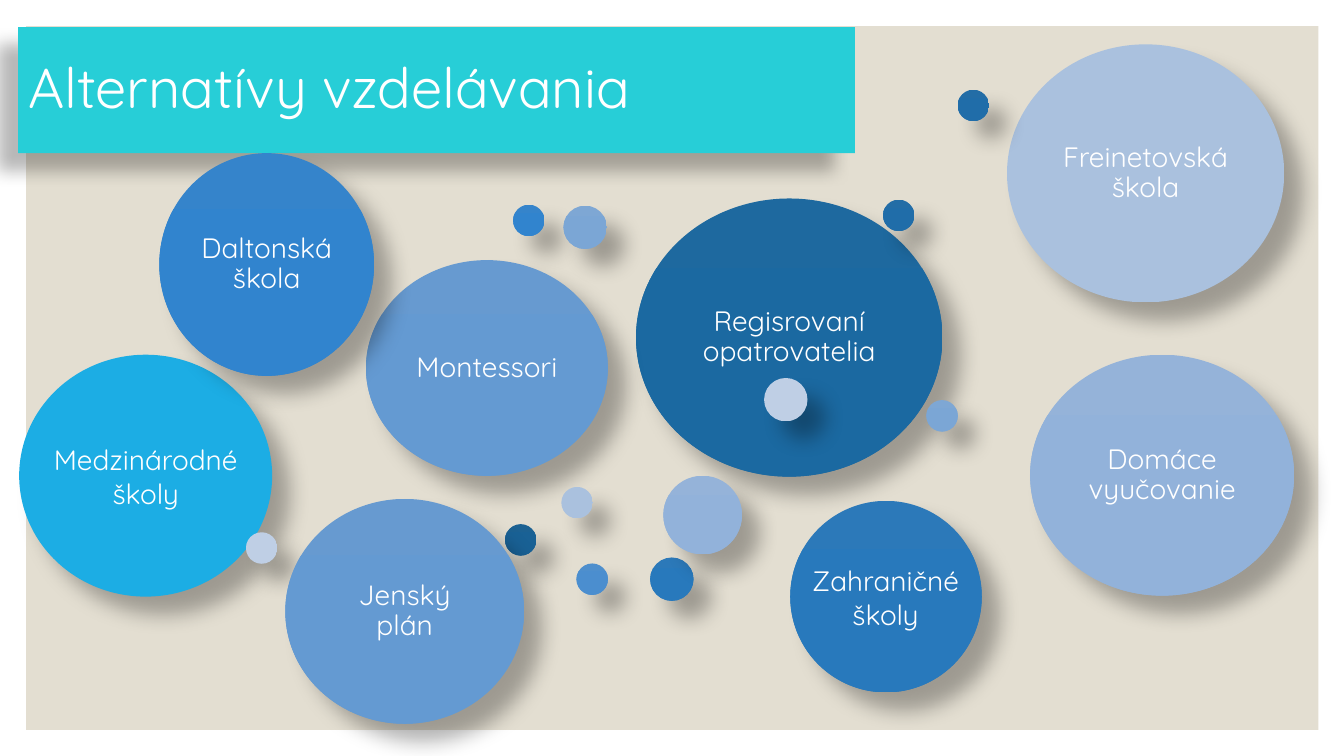
from lxml import etree
from pptx import Presentation
from pptx.dml.color import RGBColor
from pptx.enum.shapes import MSO_SHAPE
from pptx.enum.text import MSO_ANCHOR, MSO_AUTO_SIZE, PP_ALIGN
from pptx.oxml.ns import qn
from pptx.util import Pt

RECT, OVAL = MSO_SHAPE.RECTANGLE, MSO_SHAPE.OVAL
MIDDLE = MSO_ANCHOR.MIDDLE
LEFT, CENTER = PP_ALIGN.LEFT, PP_ALIGN.CENTER
NO_FIT = MSO_AUTO_SIZE.NONE

# Top and lower colour of each bubble shade, dark to pale
SHADES = {
    "ink": ("1E699F", "1B69A1"),
    "navy": ("1C6192", "196195"),
    "deep": ("236DA6", "206DA9"),
    "royal": ("2C79B9", "2879BC"),
    "bright": ("3584CB", "3184CE"),
    "mid": ("4E8FCD", "4B8ECF"),
    "soft": ("679AD0", "649AD2"),
    "light": ("7EA7D4", "7BA6D5"),
    "pale": ("95B3D9", "92B2DA"),
    "mist": ("AAC1DE", "A8C0DF"),
    "haze": ("BFCFE5", "BECEE4"),
}
SMALL, MEDIUM, LARGE = 22.5, 31, 56.2

# Shade, left, top, width, height, label; from back to front
BUBBLES = [
    ("ink", 454.3, 141.8, 218.9, 198.7, "Regisrovaní opatrovatelia"),
    ("navy", 360.7, 374.4, SMALL, SMALL, ""),
    ("deep", 630.7, 142.6, SMALL, SMALL, ""),
    ("royal", 464.4, 398.2, MEDIUM, MEDIUM, ""),
    ("bright", 366.5, 146.2, SMALL, SMALL, ""),
    ("soft", 261.4, 185.8, 172.8, 154.1, "Montessori"),
    ("light", 402.5, 146.9, MEDIUM, MEDIUM, ""),
    ("pale", 473.8, 339.8, LARGE, LARGE, ""),
    ("mist", 719.3, 31.7, 198, 184.3, "Freinetovská škola"),
    ("haze", 545.8, 270, MEDIUM, MEDIUM, ""),
    ("haze", 175.7, 380.2, SMALL, SMALL, ""),
    ("mist", 401, 347.8, SMALL, SMALL, ""),
    ("pale", 735.8, 253.4, 188.6, 172.1, "Domáce vyučovanie"),
    ("light", 661.7, 285.8, SMALL, SMALL, ""),
    ("soft", 203.8, 356.4, 170.6, 160.6, "Jenský plán"),
    ("mid", 411.8, 402.5, SMALL, SMALL, ""),
    ("bright", 113.8, 109.4, 153.4, 159.1, "Daltonská škola"),
    ("royal", 564.5, 357.8, 136.8, 136.8, ""),
    ("deep", 684, 64.1, SMALL, SMALL, ""),
]


def paint(fill, top, low=None):
    """Fill with one colour, or fade from top to low over the upper half."""
    if low is None:
        fill.solid()
        fill.fore_color.rgb = RGBColor.from_string(top)
        return
    fill.gradient()
    fill.gradient_angle = 270
    for stop, place, shade in zip(fill.gradient_stops, (0, 0.5), (top, low)):
        stop.position = place
        stop.color.rgb = RGBColor.from_string(shade)


def cast(shape, blur=15, dist=18, angle=45, alpha=30):
    """Give the shape a soft black shadow."""
    shape.shadow.inherit = False
    effects = shape.element.spPr.find(qn("a:effectLst"))
    outer = etree.SubElement(effects, qn("a:outerShdw"), blurRad=str(Pt(blur)),
                             dist=str(Pt(dist)), dir=str(angle * 60000),
                             rotWithShape="0")
    black = etree.SubElement(outer, qn("a:srgbClr"), val="000000")
    etree.SubElement(black, qn("a:alpha"), val=str(alpha * 1000))


class Board:
    font, ink = "Quicksand", "FFFFFF"

    def __init__(self, deck):
        self.slide = deck.slides.add_slide(deck.slide_layouts[5])
        self.shapes = self.slide.shapes

    def letter(self, shape, text, size=20, align=CENTER, space=0.9):
        """Put styled text into the shape."""
        frame = shape.text_frame
        frame.text = text
        frame.word_wrap = True
        frame.auto_size = NO_FIT
        frame.vertical_anchor = MIDDLE
        line = frame.paragraphs[0]
        line.alignment, line.line_spacing = align, space
        line.font.name, line.font.size = self.font, Pt(size)
        paint(line.font.fill, self.ink)

    def title(self, text, box, shade):
        shape = self.shapes.title
        shape.left, shape.top, shape.width, shape.height = map(Pt, box)
        paint(shape.fill, shade)
        cast(shape, 11.8, 19.7, 141, 28)
        self.letter(shape, text, 40, LEFT)
        shape.element.getparent().append(shape.element)

    def form(self, kind, box, *shades):
        shape = self.shapes.add_shape(kind, *map(Pt, box))
        paint(shape.fill, *shades)
        shape.line.fill.background()
        shape.shadow.inherit = False
        return shape

    def bubble(self, box, *shades, text=""):
        shape = self.form(OVAL, box, *shades)
        cast(shape)
        if text:
            frame = shape.text_frame
            frame.margin_left = frame.margin_right = Pt(6)
            frame.margin_top = frame.margin_bottom = Pt(6)
            self.letter(shape, text)

    def label(self, text, box):
        self.letter(self.shapes.add_textbox(*map(Pt, box)), text, space=1.0)


def main():
    deck = Presentation()
    deck.slide_width, deck.slide_height = Pt(960), Pt(540)
    board = Board(deck)
    board.form(RECT, (18.7, 18.7, 923, 502.6), "E3DED1")
    board.bubble((13.7, 253.4, 180.7, 172.8), "1CADE4")
    board.title("Alternatívy vzdelávania", (13, 19.4, 597.6, 90), "27CED7")
    for shade, *box, text in BUBBLES:
        board.bubble(box, *SHADES[shade], text=text)
    board.label("Medzinárodné školy", (21.6, 312.5, 164.9, 55.4))
    board.label("Zahraničné školy", (568.1, 398.9, 128.9, 55.4))
    deck.save("out.pptx")


if __name__ == "__main__":
    main()
